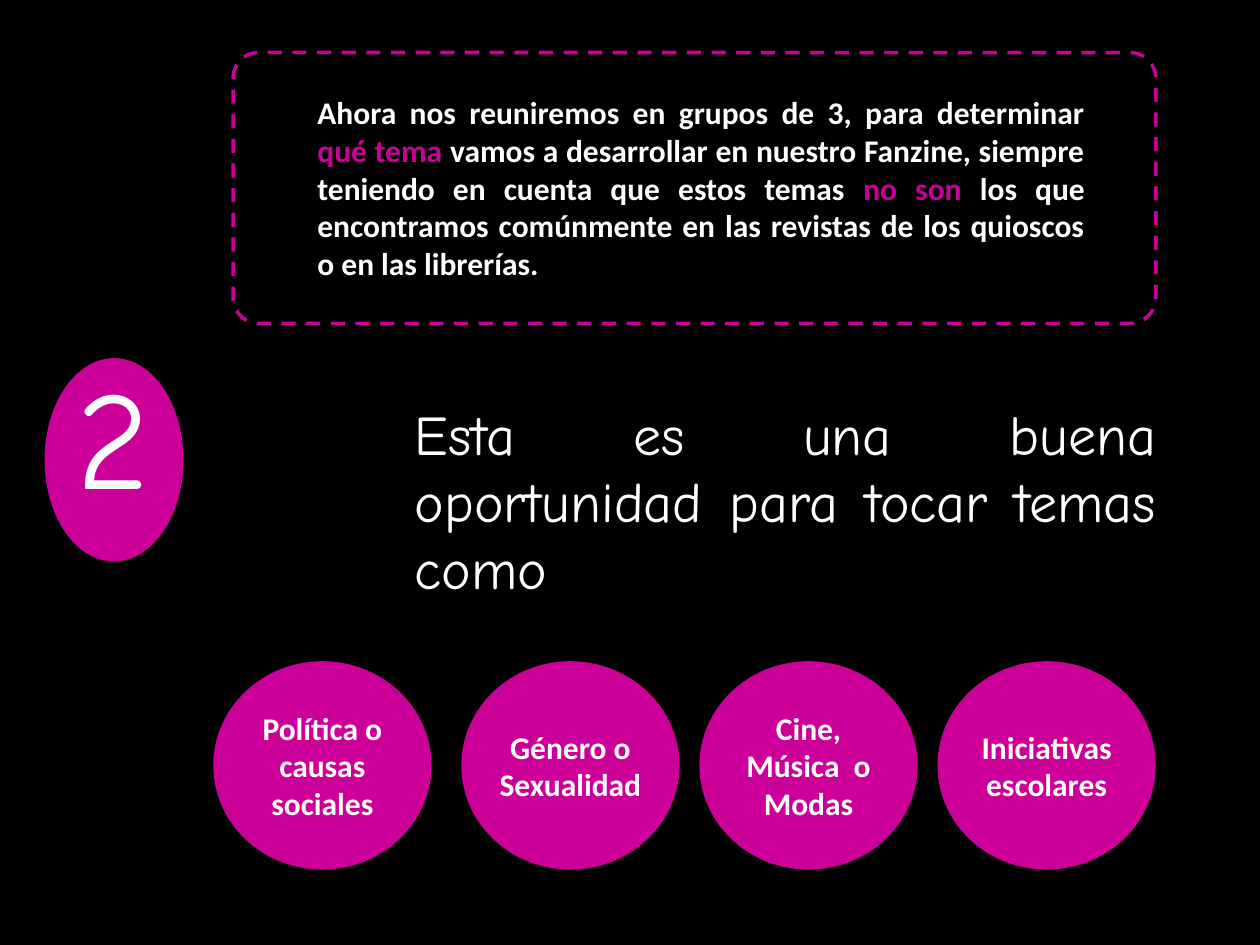
from pptx import Presentation
from pptx.dml.color import RGBColor
from pptx.enum.dml import MSO_LINE
from pptx.enum.shapes import MSO_SHAPE as Shape
from pptx.enum.text import MSO_ANCHOR as Anchor, PP_ALIGN as Align
from pptx.util import Cm, Pt

BLACK = RGBColor(0x00, 0x00, 0x00)
WHITE = RGBColor(0xFF, 0xFF, 0xFF)
MAGENTA = RGBColor(0xCC, 0x00, 0x99)
BODY_FONT = "Calibri"
HAND_FONT = "Comic Neue"

CIRCLE_TOP, CIRCLE_WIDTH, CIRCLE_HEIGHT = 13.33, 4.4, 4.2
# Circle left, label width, label line count, label text
TOPICS = [
    (4.3, 3.0, 3, "Política o causas sociales"),
    (9.3, 3.7, 2, "Género o Sexualidad"),
    (14.1, 3.83, 3, "Cine, Música  o Modas"),
    (18.9, 3.3, 2, "Iniciativas escolares"),
]
INSTRUCTIONS = [
    ("Ahora nos reuniremos en grupos de 3, para determinar ", WHITE),
    ("qué tema ", MAGENTA),
    ("vamos a desarrollar en nuestro Fanzine, siempre teniendo en cuenta "
     "que estos temas ", WHITE),
    ("no son ", MAGENTA),
    ("los que encontramos comúnmente en las revistas de los quioscos "
     "o en las librerías.", WHITE),
]


def add_ellipse(slide, left, top, width, height):
    ellipse = slide.shapes.add_shape(
        Shape.OVAL, Cm(left), Cm(top), Cm(width), Cm(height))
    ellipse.shadow.inherit = False
    ellipse.fill.solid()
    ellipse.fill.fore_color.rgb = MAGENTA
    ellipse.line.fill.background()


def add_dashed_frame(slide, left, top, width, height):
    frame = slide.shapes.add_shape(
        Shape.ROUNDED_RECTANGLE, Cm(left), Cm(top), Cm(width), Cm(height))
    frame.adjustments[0] = 0.095
    frame.shadow.inherit = False
    frame.fill.background()
    frame.line.color.rgb = MAGENTA
    frame.line.width = Pt(2)
    frame.line.dash_style = MSO_LINE.DASH


def add_text(slide, left, top, width, height, runs, font_name, size,
             alignment=Align.LEFT, bold=False, anchor=Anchor.TOP):
    """Add a wrapped text box of one paragraph from (text, colour) runs."""
    box = slide.shapes.add_textbox(Cm(left), Cm(top), Cm(width), Cm(height))
    box.text_frame.word_wrap = True
    box.text_frame.vertical_anchor = anchor
    paragraph = box.text_frame.paragraphs[0]
    paragraph.alignment = alignment
    paragraph.font.name = font_name
    paragraph.font.size = Pt(size)
    paragraph.font.bold = bold
    for text, colour in runs:
        run = paragraph.add_run()
        run.text = text
        run.font.color.rgb = colour


def add_topic(slide, left, label_width, line_count, label):
    """Add a circle with its label centred on it."""
    add_ellipse(slide, left, CIRCLE_TOP, CIRCLE_WIDTH, CIRCLE_HEIGHT)
    label_height = 0.26 + 0.77 * line_count
    add_text(slide, left + (CIRCLE_WIDTH - label_width) / 2,
             CIRCLE_TOP + (CIRCLE_HEIGHT - label_height) / 2,
             label_width, label_height, [(label, WHITE)], BODY_FONT, 18,
             Align.CENTER, bold=True, anchor=Anchor.MIDDLE)


def main():
    presentation = Presentation()
    presentation.slide_width, presentation.slide_height = Cm(25.4), Cm(19.05)
    slide = presentation.slides.add_slide(presentation.slide_layouts[6])
    slide.background.fill.solid()
    slide.background.fill.fore_color.rgb = BLACK

    add_ellipse(slide, 0.9, 7.22, 2.8, 4.1)
    add_text(slide, 1.3, 6.93, 2.4, 3.68, [("2", WHITE)], HAND_FONT, 80)

    add_dashed_frame(slide, 4.7, 1.06, 18.6, 5.46)
    add_text(slide, 6.15, 1.75, 15.97, 4.1, INSTRUCTIONS, BODY_FONT, 18,
             Align.JUSTIFY, bold=True)

    add_text(slide, 8.11, 7.92, 15.46, 4.37,
             [("Esta es una buena oportunidad para tocar temas como", WHITE)],
             HAND_FONT, 32, Align.JUSTIFY)

    for topic in TOPICS:
        add_topic(slide, *topic)

    presentation.save("out.pptx")


if __name__ == "__main__":
    main()
